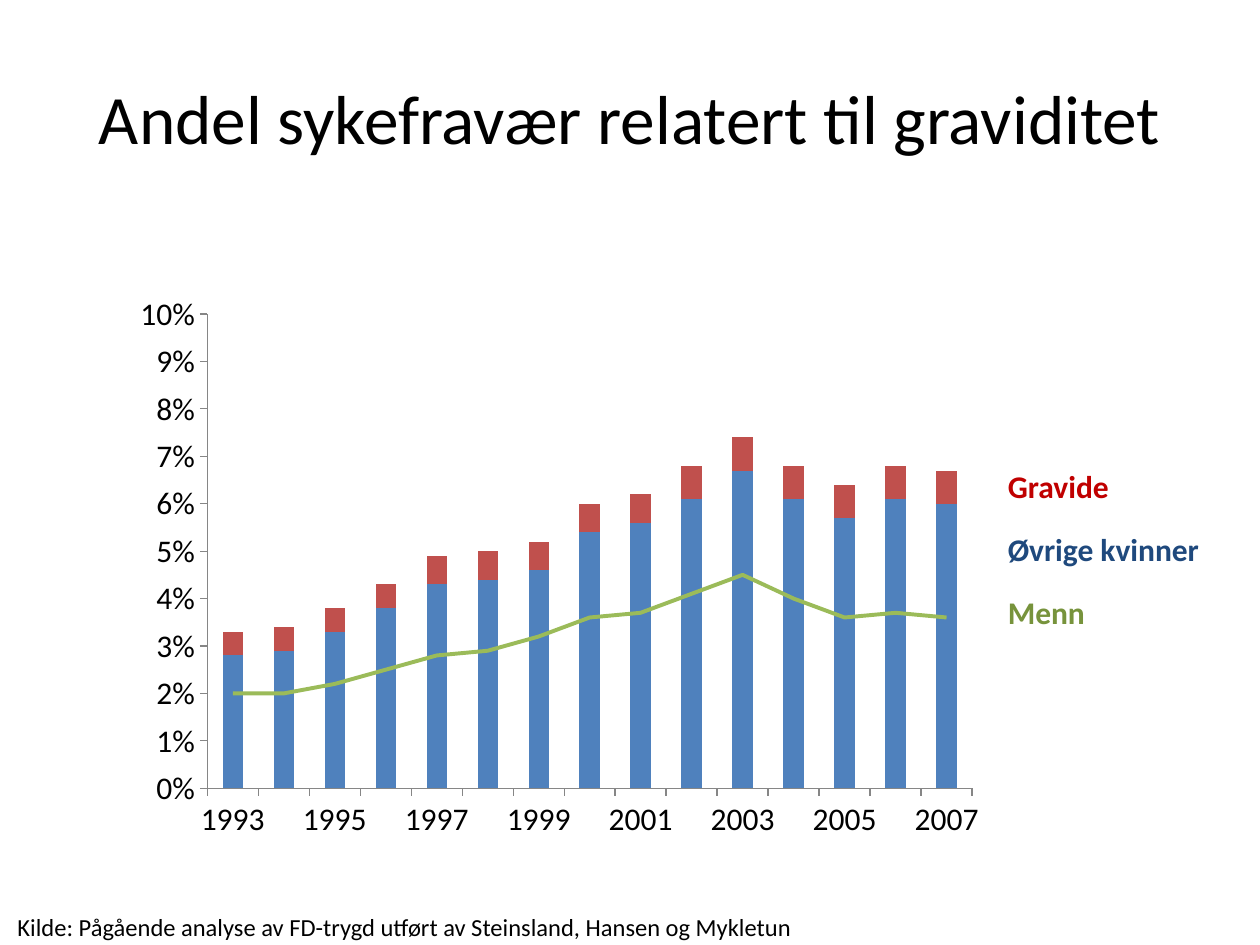
import copy
from dataclasses import dataclass

import pptx
import pptx.chart.data
import pptx.dml.color
import pptx.enum.chart
import pptx.enum.text
import pptx.oxml
import pptx.oxml.ns
import pptx.util
from pptx.oxml.ns import qn

Pt = pptx.util.Pt
RGB = pptx.dml.color.RGBColor.from_string
XL = pptx.enum.chart


@dataclass(frozen=True)
class Theme:
    font: str = "Calibri"
    text: str = "000000"
    axis: str = "868686"
    others: str = "4F81BD"
    pregnant: str = "C0504D"
    men: str = "9BBB59"
    pregnant_label: str = "C00000"
    others_label: str = "1F497D"
    men_label: str = "77933C"
    title_size: float = 39.6
    body_size: float = 18
    source_size: float = 14


def apply(obj, **values):
    for name, value in values.items():
        setattr(obj, name, value)


def c_element(tag, **attrs):
    el = pptx.oxml.parse_xml(f"<c:{tag} {pptx.oxml.ns.nsdecls('c')}/>")
    for name, value in attrs.items():
        el.set(name, str(value))
    return el


class Deck:
    """Lengths are shares of the slide's width and height."""

    def __init__(self, theme, width=10, height=7.5):
        self.theme = theme
        self.prs = pptx.Presentation()
        apply(self.prs, slide_width=pptx.util.Inches(width),
              slide_height=pptx.util.Inches(height))
        self.s = self.prs.slides.add_slide(self.prs.slide_layouts[5])

    def box(self, x, y, w, h):
        sw, sh = self.prs.slide_width, self.prs.slide_height
        return [round(v) for v in (x * sw, y * sh, w * sw, h * sh)]

    def style(self, font, size, color, bold=False):
        apply(font, name=self.theme.font, size=Pt(size), bold=bold)
        font.color.rgb = RGB(color)

    def title(self, text, *share):
        sp = self.s.shapes.title
        apply(sp, **dict(zip(("left", "top", "width", "height"), self.box(*share))))
        tf = sp.text_frame
        apply(tf, text=text, vertical_anchor=pptx.enum.text.MSO_ANCHOR.MIDDLE)
        p = tf.paragraphs[0]
        p.alignment = pptx.enum.text.PP_ALIGN.CENTER
        self.style(p.runs[0].font, self.theme.title_size, self.theme.text)

    def text(self, lines, size, *share, bold=False, gap=0):
        """Adds one paragraph for each (text, colour) pair."""
        tf = self.s.shapes.add_textbox(*self.box(*share)).text_frame
        apply(tf, word_wrap=False,
              auto_size=pptx.enum.text.MSO_AUTO_SIZE.SHAPE_TO_FIT_TEXT)
        for i, (line, color) in enumerate(lines):
            p = tf.add_paragraph() if i else tf.paragraphs[0]
            p.space_before = Pt(gap if i else 0)
            r = p.add_run()
            r.text = line
            self.style(r.font, size, color, bold)

    def combo_chart(self, categories, series, plot_area, *share):
        """Stacks the (name, values, colour) series; the last becomes a line."""
        data = pptx.chart.data.CategoryChartData(number_format="0.0%")
        data.categories = categories
        for name, values, _ in series:
            data.add_series(name, values)
        chart = self.s.shapes.add_chart(
            XL.XL_CHART_TYPE.COLUMN_STACKED, *self.box(*share), data).chart
        apply(chart, has_legend=False, has_title=False)
        self.style(chart.font, self.theme.body_size, self.theme.text)
        self.last_series_to_line(chart)
        self.place_plot(chart, *plot_area)

        bars, lines = chart.plots
        apply(bars, gap_width=150, overlap=100, vary_by_categories=False)
        for ser, (_, _, color) in zip(bars.series, series):
            ser.invert_if_negative = False
            ser.format.fill.solid()
            ser.format.fill.fore_color.rgb = RGB(color)
        line = lines.series[0]
        line.smooth = False
        line.marker.style = XL.XL_MARKER_STYLE.NONE
        line.format.line.width = Pt(2.25)
        line.format.line.color.rgb = RGB(series[-1][2])

        for axis in (chart.category_axis, chart.value_axis):
            apply(axis, has_major_gridlines=False,
                  major_tick_mark=XL.XL_TICK_MARK.OUTSIDE,
                  minor_tick_mark=XL.XL_TICK_MARK.NONE)
            axis.format.line.color.rgb = RGB(self.theme.axis)
        apply(chart.value_axis, minimum_scale=0, maximum_scale=0.1, major_unit=0.01)
        apply(chart.value_axis.tick_labels, number_format="0%",
              number_format_is_linked=False)

    @staticmethod
    def last_series_to_line(chart):
        bar = chart.plots[0]._element
        ser = bar.findall(qn("c:ser"))[-1]
        for bar_only in ser.findall(qn("c:invertIfNegative")):
            ser.remove(bar_only)
        line = c_element("lineChart")
        line.extend([c_element("grouping", val="standard"),
                     c_element("varyColors", val=0), ser,
                     c_element("marker", val=1)])
        line.extend(copy.deepcopy(bar.findall(qn("c:axId"))))
        bar.addnext(line)

    @staticmethod
    def place_plot(chart, x, y, w, h):
        """Fixes the inner plot area, in shares of the chart."""
        manual = c_element("manualLayout")
        manual.append(c_element("layoutTarget", val="inner"))
        manual.extend([c_element(tag, val="edge") for tag in ("xMode", "yMode")])
        manual.extend([c_element(tag, val=v) for tag, v in zip("xywh", (x, y, w, h))])
        layout = c_element("layout")
        layout.append(manual)
        area = chart._chartSpace.chart.plotArea
        for old in area.findall(qn("c:layout")):
            area.remove(old)
        area.insert(0, layout)


def main():
    theme = Theme()
    deck = Deck(theme)
    deck.title("Andel sykefravær relatert til graviditet", 0.05, 0.04, 0.9, 1 / 6)

    years = [str(y) if y % 2 else "" for y in range(1993, 2008)]
    others = [0.028, 0.029, 0.033, 0.038, 0.043, 0.044, 0.046, 0.054,
              0.056, 0.061, 0.067, 0.061, 0.057, 0.061, 0.06]
    pregnant = [0.005] * 4 + [0.006] * 5 + [0.007] * 6
    men = [0.02, 0.02, 0.022, 0.025, 0.028, 0.029, 0.032, 0.036,
           0.037, 0.041, 0.045, 0.04, 0.036, 0.037, 0.036]
    deck.combo_chart(
        years,
        [("Series 1", others, theme.others),
         ("Series 2", pregnant, theme.pregnant),
         ("Series 3", men, theme.men)],
        (0.096, 0.054, 0.876, 0.838),
        0.098, 0.3, 0.693, 0.599)

    deck.text([("Gravide", theme.pregnant_label),
               ("Øvrige kvinner", theme.others_label),
               ("Menn", theme.men_label)],
              theme.body_size, 0.79, 0.488, 0.173, 0.188, bold=True, gap=14.4)
    deck.text([("Kilde: Pågående analyse av FD-trygd utført av "
                "Steinsland, Hansen og Mykletun", theme.text)],
              theme.source_size, 0.004, 0.959, 0.641, 0.045)
    deck.prs.save("out.pptx")


if __name__ == "__main__":
    main()
